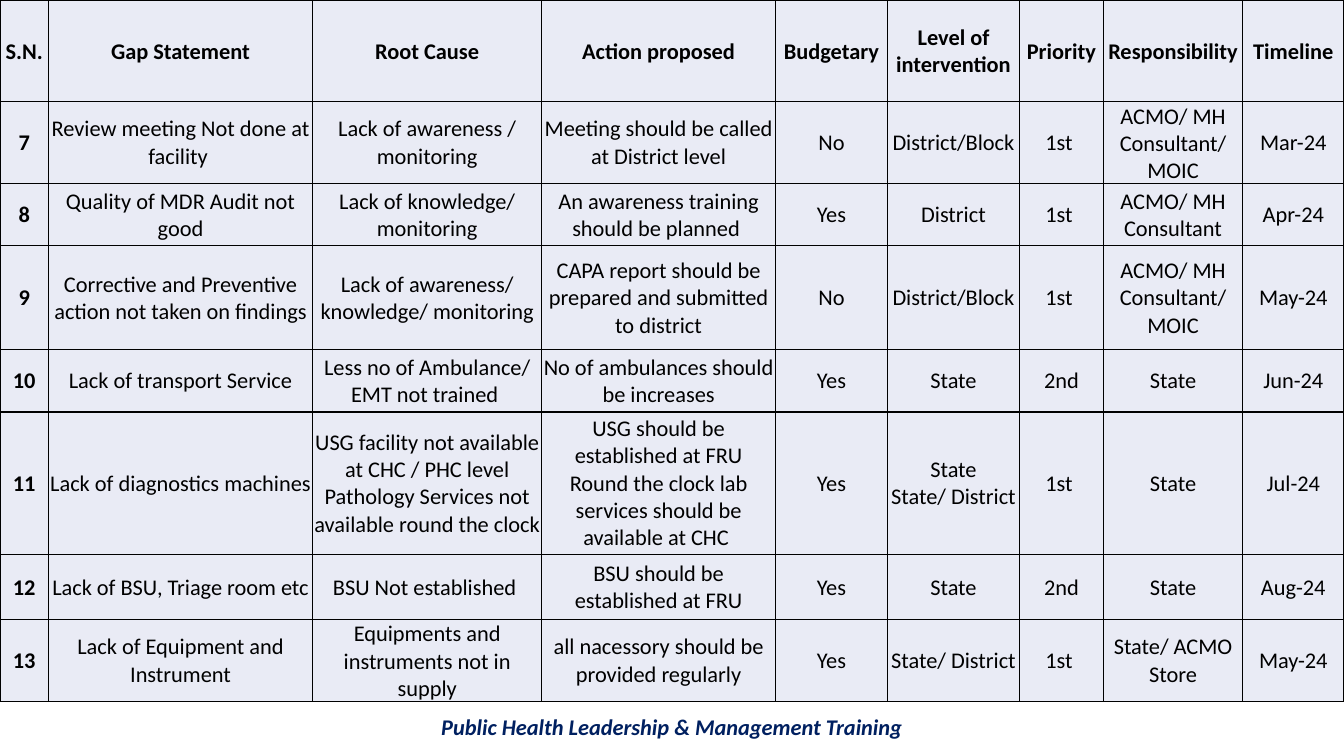
from dataclasses import dataclass
from lxml import etree
from pptx import Presentation
from pptx.dml.color import RGBColor
from pptx.enum.text import MSO_ANCHOR, PP_ALIGN
from pptx.oxml.ns import qn
from pptx.util import Pt

CENTER = PP_ALIGN.CENTER
MIDDLE = MSO_ANCHOR.MIDDLE
BLANK_LAYOUT = 6

HEADER = ("S.N.", "Gap Statement", "Root Cause", "Action proposed", "Budgetary",
          "Level of intervention", "Priority", "Responsibility", "Timeline")
GAPS = [
    ("7", "Review meeting Not done at facility ", "Lack of awareness / monitoring",
     "Meeting should be called at District level", "No", "District/Block", "1st ",
     "ACMO/ MH Consultant/ MOIC", "Mar-24"),
    ("8", "Quality of MDR Audit not good", "Lack of knowledge/ monitoring",
     "An awareness training should be planned ", "Yes", "District", "1st ",
     "ACMO/ MH Consultant", "Apr-24"),
    ("9", "Corrective and Preventive action not taken on findings",
     "Lack of awareness/ knowledge/ monitoring",
     "CAPA report should be prepared and submitted to district", "No",
     "District/Block", "1st ", "ACMO/ MH Consultant/ MOIC", "May-24"),
    ("10", "Lack of transport Service", "Less no of Ambulance/ EMT not trained ",
     "No of ambulances should be increases", "Yes", "State", "2nd", "State", "Jun-24"),
    ("11", "Lack of diagnostics machines",
     "USG facility not available at CHC / PHC level\n"
     "Pathology Services not available round the clock",
     "USG should be established at FRU\n"
     "Round the clock lab services should be available at CHC ",
     "Yes", "State\nState/ District", "1st ", "State", "Jul-24"),
    ("12", "Lack of BSU, Triage room etc", "BSU Not established ",
     "BSU should be established at FRU", "Yes", "State", "2nd", "State", "Aug-24"),
    ("13", "Lack of Equipment and Instrument", "Equipments and instruments not in supply",
     "all nacessory should be provided regularly", "Yes", "State/ District", "1st ",
     "State/ ACMO Store", "May-24"),
]
FOOTER = "Public Health Leadership & Management Training"
COL_WIDTHS = (34.6, 188.8, 163.6, 167, 80, 94.3, 59.9, 99.6, 72.2)
ROW_HEIGHTS = (72.7, 58, 44.6, 74.2, 44.6, 101.5, 46.8, 58)


@dataclass(frozen=True)
class Theme:
    font: str = "Calibri"
    size: float = 16
    ink: str = "000000"
    footer: str = "002060"
    cell: str = "E9EBF5"
    border: str = "000000"
    border_width: float = 1


THEME = Theme()


def write(p, text, color, bold=False, italic=False):
    p.text = text
    p.alignment = CENTER
    for r in p.runs:
        r.font.name = THEME.font
        r.font.size = Pt(THEME.size)
        r.font.bold = bold
        r.font.italic = italic
        r.font.color.rgb = RGBColor.from_string(color)


def add_borders(cell):
    tc_pr = cell._tc.get_or_add_tcPr()
    for i, side in enumerate(("a:lnL", "a:lnR", "a:lnT", "a:lnB")):
        ln = etree.Element(qn(side), w=str(Pt(THEME.border_width)))
        fill = etree.SubElement(ln, qn("a:solidFill"))
        etree.SubElement(fill, qn("a:srgbClr"), val=THEME.border)
        tc_pr.insert(i, ln)


def format_cell(cell, text, bold):
    cell.margin_left = cell.margin_right = cell.margin_top = Pt(0.7)
    cell.margin_bottom = Pt(0)
    cell.vertical_anchor = MIDDLE
    cell.fill.solid()
    cell.fill.fore_color.rgb = RGBColor.from_string(THEME.cell)
    add_borders(cell)
    write(cell.text_frame.paragraphs[0], text, THEME.ink, bold)


def add_gap_table(s):
    rows = [HEADER, *GAPS]
    table = s.shapes.add_table(len(rows), len(HEADER), Pt(0), Pt(0),
                               Pt(sum(COL_WIDTHS)), Pt(sum(ROW_HEIGHTS))).table
    table.first_row = table.horz_banding = False
    for column, width in zip(table.columns, COL_WIDTHS):
        column.width = Pt(width)
    for row, height in zip(table.rows, ROW_HEIGHTS):
        row.height = Pt(height)
    for i, row in enumerate(rows):
        for j, text in enumerate(row):
            format_cell(table.cell(i, j), text, bold=i == 0 or j == 0)


def add_footer(s):
    tf = s.shapes.add_textbox(Pt(66), Pt(505.5), Pt(828), Pt(26.6)).text_frame
    tf.word_wrap = True
    write(tf.paragraphs[0], FOOTER, THEME.footer, bold=True, italic=True)


def main():
    prs = Presentation()
    prs.slide_width, prs.slide_height = Pt(960), Pt(540)
    s = prs.slides.add_slide(prs.slide_layouts[BLANK_LAYOUT])
    add_footer(s)
    add_gap_table(s)
    prs.save("out.pptx")


if __name__ == "__main__":
    main()
